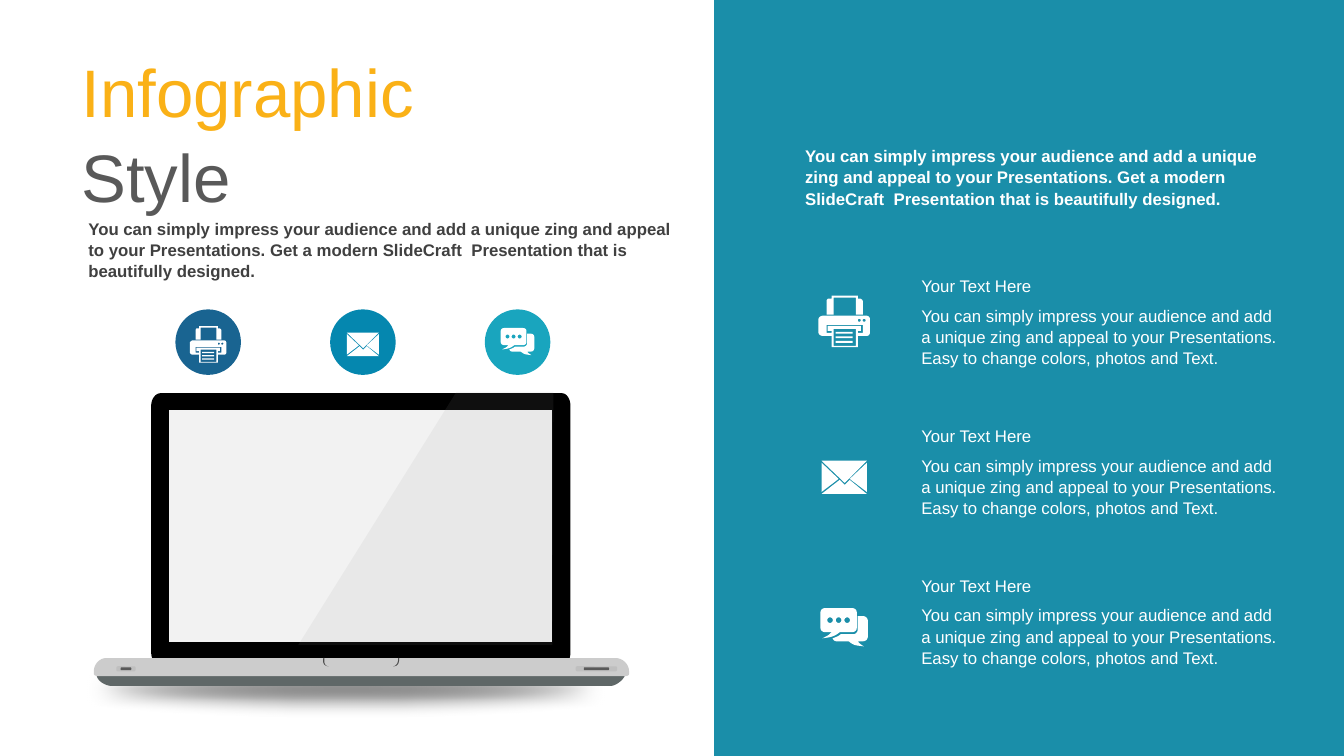
import math
from lxml import etree
from pptx import Presentation
from pptx.dml.color import RGBColor
from pptx.enum import shapes, text
from pptx.oxml import ns
from pptx.util import Pt

WHITE = "FFFFFF"


def paint(sp, color, alpha=100):
    """Fill a shape with a hex colour, without line or shadow."""
    sp.shadow.inherit = False
    sp.fill.solid()
    sp.fill.fore_color.rgb = RGBColor.from_string(color)
    sp.line.fill.background()
    if alpha < 100:
        clr = sp._element.spPr.find(".//" + ns.qn("a:srgbClr"))
        etree.SubElement(clr, ns.qn("a:alpha"), val=str(alpha * 1000))


def draw(contours, color, left=0, top=0, scale=1, alpha=100):
    """Draw closed contours of points (x, y) and cubic curves (six numbers)."""
    builder = None
    for contour in contours:
        pts = []
        for item in contour:
            if len(item) == 2:
                pts.append(item)
                continue
            (x0, y0), (x1, y1, x2, y2, x3, y3) = pts[-1], item
            for t in (i / 8 for i in range(1, 9)):
                a, b, c, d = (1 - t) ** 3, 3 * t * (1 - t) ** 2, 3 * t * t * (1 - t), t ** 3
                pts.append((a * x0 + b * x1 + c * x2 + d * x3,
                            a * y0 + b * y1 + c * y2 + d * y3))
        pts = [(Pt(left + x * scale), Pt(top + y * scale)) for x, y in pts]
        if builder is None:
            builder = s.shapes.build_freeform(*pts[0], scale=1.0)
        else:
            builder.move_to(*pts[0])
        builder.add_line_segments(pts[1:], close=True)
    paint(builder.convert_to_shape(), color, alpha)


prs = Presentation()
prs.slide_width, prs.slide_height = Pt(960), Pt(540)
s = prs.slides.add_slide(prs.slide_layouts[5])

# Soft shadow under the laptop
sp = s.shapes.add_shape(shapes.MSO_SHAPE.OVAL, Pt(15), Pt(471.6), Pt(465), Pt(41))
paint(sp, "808080")
effects = sp._element.spPr.find(ns.qn("a:effectLst"))
etree.SubElement(effects, ns.qn("a:softEdge"), rad=str(Pt(12.5)))

# Laptop: foot, lid, screen, base, notch
draw([[(69, 480), (447, 480), (447, 485, 440, 490, 436, 490), (80, 490),
       (75, 490, 69, 486, 69, 482)]], "5F6767")
draw([[(407.5, 466), (407.5, 471, 405, 475, 401, 475), (115, 475),
       (111, 475, 108, 471, 108, 466), (108, 290), (108, 285, 111, 280.8, 115, 280.8),
       (401, 280.8), (405, 280.8, 407.5, 285, 407.5, 290)]], "000000")
draw([[(121, 293), (394.5, 293), (394.5, 458.6), (121, 458.6)]], "F2F2F2")
draw([[(76, 470), (439.5, 470), (445, 470, 449.3, 474.5, 449.3, 479.5), (449.3, 481.5),
       (449.3, 483, 446, 483, 445, 483), (72, 483), (70, 483, 67, 483, 67, 481),
       (67, 479.5), (67, 474.5, 71, 470, 76, 470)]], "CCCCCC")
draw([[(231, 470), (231.7, 470), (231.4, 474, 232, 475.5, 234.7, 476),
       (230.7, 475.5, 230.5, 473, 231, 470)],
      [(285.2, 470), (284.5, 470), (284.5, 474, 283, 475.5, 280.8, 476),
       (284, 476, 285.2, 474, 285.2, 470)]], "4D4D4D")

# Ports on the base
for center, outer, inner in ((90, 13.7, 7.6), (426, 29.5, 18)):
    for width, height, color in ((outer, 3.6, "BFBFBF"), (inner, 2, "595959")):
        sp = s.shapes.add_shape(shapes.MSO_SHAPE.ROUNDED_RECTANGLE, Pt(center - width / 2),
                                Pt(477.7 - height / 2), Pt(width), Pt(height))
        sp.adjustments[0] = 0.28
        paint(sp, color)

# Glare on the screen
draw([[(326, 280), (395.3, 280), (394.6, 460.8), (213, 460.8)]], "999999", alpha=10)

# Right panel
sp = s.shapes.add_shape(shapes.MSO_SHAPE.RECTANGLE, Pt(510), 0, Pt(450), Pt(540))
paint(sp, "1A8EA9")

# Icon outlines, in hundredths of an inch at full size
dots = [[(x + r * math.cos(k * math.pi / 8), y + r * math.sin(k * math.pi / 8))
         for k in range(16)]
        for x, y, r in ((40.5, 24.5, 1.5), (45.3, 24.5, 1.5),
                        (9.5, 12, 2.8), (18, 12, 2.8), (26.5, 12, 2.8))]
printer = [[(17, y), (34, y), (34, y + 1.8), (17, y + 1.8)] for y in (36, 40.5, 45)]
printer += dots[:2] + [
    [(15, 33), (37, 33), (37, 50), (15, 50)],
    [(8, 29), (8, 37), (13, 37), (13, 35), (9, 35), (9, 30), (42, 30), (42, 35),
     (39, 35), (39, 37), (44, 37), (44, 29)],
    [(4, 20), (48, 20), (50, 20, 51, 22, 51, 23), (51, 37), (51, 38, 50, 40, 48, 40),
     (39, 40), (39, 51), (13, 51), (13, 40), (4, 40), (2, 40, 0, 38, 0, 37), (0, 23),
     (0, 22, 2, 20, 4, 20)],
    [(13, 0), (39, 0), (39, 3), (41, 3), (42, 3, 44, 4, 44, 6), (44, 19), (37, 19),
     (37, 2), (15, 2), (15, 19), (8, 19), (8, 6), (8, 4, 9, 3, 10, 3), (13, 3)]]
envelope = [[(28, 19), (45, 33), (0, 33), (18, 19), (23, 24)],
            [(45, 2), (45, 31), (28, 18)],
            [(0, 2), (17, 18), (0, 31)],
            [(0, 0), (45, 0), (23, 22)]]
chat = dots[2:] + [
    [(37, 8), (42, 8), (45, 8, 47, 10, 47, 13), (47, 28), (47, 31, 45, 33, 42, 33),
     (37, 33), (38, 34, 38, 35, 43, 38), (34, 37, 33, 37, 28, 33), (16, 33),
     (14, 33, 13, 32, 12, 30), (15, 29, 18, 28, 20, 26), (32, 26),
     (35, 26, 37, 24, 37, 21)],
    [(5, 0), (31, 0), (34, 0, 36, 2, 36, 4), (36, 20), (36, 22, 34, 24, 31, 24),
     (19, 24), (14, 28, 11, 29, 2, 30), (8, 27, 8, 27, 11, 24), (5, 24),
     (2, 24, 0, 22, 0, 20), (0, 4), (0, 2, 2, 0, 5, 0)]]

intro = ("You can simply impress your audience and add a unique zing and appeal to your "
         "Presentations. Get a modern SlideCraft  Presentation that is beautifully designed.")
detail = ("You can simply impress your audience and add a unique zing and appeal to your "
          "Presentations. Easy to change colors, photos and Text.")
top_anchor, middle = text.MSO_ANCHOR.TOP, text.MSO_ANCHOR.MIDDLE
boxes = [(56, 152, 433, 51, intro, "404040", True, top_anchor),
         (568, 100, 338.5, 51, intro, WHITE, True, top_anchor)]

# Icons in circles above the laptop, and again beside the rows of text
icons = ((printer, 51, 51, "196491", 246, 229.5),
         (envelope, 45, 33, "0587AF", 246, 341),
         (chat, 47, 38, "19A5BE", 244, 448))
for i, (icon, width, height, color, badge_y, row_y) in enumerate(icons):
    badge_x = 148.7 + 110.5 * i
    sp = s.shapes.add_shape(shapes.MSO_SHAPE.OVAL, Pt(badge_x - 23.4), Pt(221), Pt(46.8), Pt(46.8))
    paint(sp, color)
    for x, y, scale in ((badge_x, badge_y, 0.51), (603, row_y, 0.72)):
        draw(icon, WHITE, x - width * scale / 2, y - height * scale / 2, scale)
    row_top = 193 + 107 * i
    boxes += [(651, row_top, 269, 21.6, "Your Text Here", WHITE, False, middle),
              (651, row_top + 21, 269, 51, detail, WHITE, False, top_anchor)]

for left, top, width, height, words, color, bold, anchor in boxes:
    tf = s.shapes.add_textbox(Pt(left), Pt(top), Pt(width), Pt(height)).text_frame
    tf.word_wrap = True
    tf.vertical_anchor = anchor
    tf.text = words
    p = tf.paragraphs[0]
    p.line_spacing = 1.05
    font = p.runs[0].font
    font.name, font.size, font.bold = "Arial", Pt(12), bold
    font.color.rgb = RGBColor.from_string(color)

# Title
title = s.shapes.title
title.left, title.top, title.width, title.height = Pt(51), Pt(29.5), Pt(260), Pt(124)
tf = title.text_frame
tf.word_wrap = True
tf.auto_size = text.MSO_AUTO_SIZE.NONE
tf.vertical_anchor = top_anchor
p = tf.paragraphs[0]
p.alignment = text.PP_ALIGN.LEFT
p.line_spacing = 1.05
for words, color in (("Infographic ", "FAB117"), ("Style", "595959")):
    r = p.add_run()
    r.text = words
    r.font.name, r.font.size = "Arial", Pt(48)
    r.font.color.rgb = RGBColor.from_string(color)

prs.save("out.pptx")
